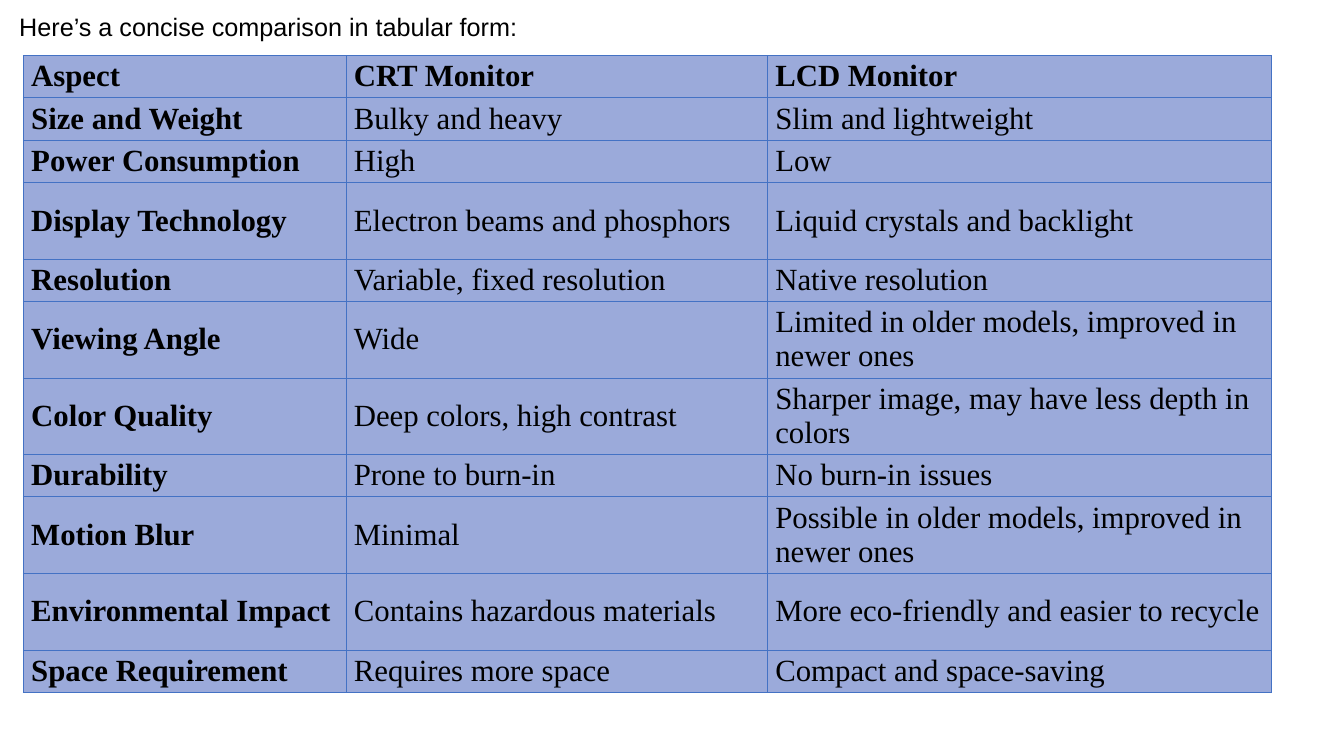
"""Build a slide comparing CRT and LCD monitors in a table."""
from dataclasses import astuple, dataclass

from lxml.etree import SubElement
from pptx import Presentation
from pptx.dml.color import RGBColor
from pptx.enum.text import MSO_ANCHOR as Anchor, PP_ALIGN as Align
from pptx.oxml.ns import qn
from pptx.slide import Slide
from pptx.table import _Cell as Cell
from pptx.text.text import TextFrame
from pptx.util import Inches, Pt

BLACK = RGBColor(0x00, 0x00, 0x00)
PERIWINKLE = RGBColor(0x9B, 0xAA, 0xDA)
BORDER_BLUE = RGBColor(0x44, 0x72, 0xC4)

COLUMN_WIDTHS = (3.2, 4.18, 5)
SHORT_ROW, TALL_ROW = 0.42, 0.76
CELL_FORMAT = {
    "vertical_anchor": Anchor.MIDDLE,
    "margin_left": Inches(0.08),
    "margin_right": Inches(0.08),
    "margin_top": Inches(0.04),
    "margin_bottom": Inches(0.04),
}
TITLE_PLACE = {
    "left": Inches(0.09),
    "top": Inches(0.01),
    "width": Inches(13.2),
    "height": Inches(0.5),
}


@dataclass
class Comparison:
    aspect: str
    crt: str
    lcd: str


HEADER = Comparison("Aspect", "CRT Monitor", "LCD Monitor")
COMPARISONS = (
    HEADER,
    Comparison("Size and Weight", "Bulky and heavy", "Slim and lightweight"),
    Comparison("Power Consumption", "High", "Low"),
    Comparison("Display Technology", "Electron beams and phosphors", "Liquid crystals and backlight"),
    Comparison("Resolution", "Variable, fixed resolution", "Native resolution"),
    Comparison("Viewing Angle", "Wide", "Limited in older models, improved in newer ones"),
    Comparison("Color Quality", "Deep colors, high contrast", "Sharper image, may have less depth in colors"),
    Comparison("Durability", "Prone to burn-in", "No burn-in issues"),
    Comparison("Motion Blur", "Minimal", "Possible in older models, improved in newer ones"),
    Comparison("Environmental Impact", "Contains hazardous materials", "More eco-friendly and easier to recycle"),
    Comparison("Space Requirement", "Requires more space", "Compact and space-saving"),
)
TALL_ASPECTS = {
    "Display Technology", "Viewing Angle", "Color Quality", "Motion Blur", "Environmental Impact",
}


def write_text(frame: TextFrame, text: str, name: str, size: int, bold: bool) -> None:
    para = frame.paragraphs[0]
    para.alignment = Align.LEFT
    span = para.add_run()
    span.text = text
    for attribute, value in {"name": name, "size": Pt(size), "bold": bold}.items():
        setattr(span.font, attribute, value)
    span.font.color.rgb = BLACK


def draw_borders(cell: Cell) -> None:
    properties = cell._tc.get_or_add_tcPr()
    for side in ("a:lnL", "a:lnR", "a:lnT", "a:lnB"):
        line = SubElement(properties, qn(side), w=str(Pt(0.5)))
        fill = SubElement(line, qn("a:solidFill"))
        SubElement(fill, qn("a:srgbClr"), val=str(BORDER_BLUE))


def fill_cell(cell: Cell, text: str, bold: bool) -> None:
    for attribute, value in CELL_FORMAT.items():
        setattr(cell, attribute, value)
    draw_borders(cell)
    cell.fill.solid()
    cell.fill.fore_color.rgb = PERIWINKLE
    write_text(cell.text_frame, text, "Times New Roman", 22, bold)


def add_title(page: Slide) -> None:
    title = page.shapes.title
    for attribute, value in TITLE_PLACE.items():
        setattr(title, attribute, value)
    title.text_frame.vertical_anchor = Anchor.MIDDLE
    write_text(title.text_frame, "Here’s a concise comparison in tabular form:", "Arial", 18, False)


def add_comparison_table(page: Slide) -> None:
    heights = [TALL_ROW if item.aspect in TALL_ASPECTS else SHORT_ROW for item in COMPARISONS]
    table = page.shapes.add_table(
        len(COMPARISONS), len(COLUMN_WIDTHS), Inches(0.23), Inches(0.55),
        Inches(sum(COLUMN_WIDTHS)), Inches(sum(heights)),
    ).table
    table.first_row = table.horz_banding = False
    for column, width in zip(table.columns, COLUMN_WIDTHS):
        column.width = Inches(width)
    for row, height, item in zip(table.rows, heights, COMPARISONS):
        row.height = Inches(height)
        for index, (cell, text) in enumerate(zip(row.cells, astuple(item))):
            fill_cell(cell, text, bold=index == 0 or item is HEADER)


def main() -> None:
    deck = Presentation()
    deck.slide_width, deck.slide_height = Inches(13.33), Inches(7.5)
    page = deck.slides.add_slide(deck.slide_layouts.get_by_name("Title Only"))
    add_title(page)
    add_comparison_table(page)
    deck.save("out.pptx")


if __name__ == "__main__":
    main()
